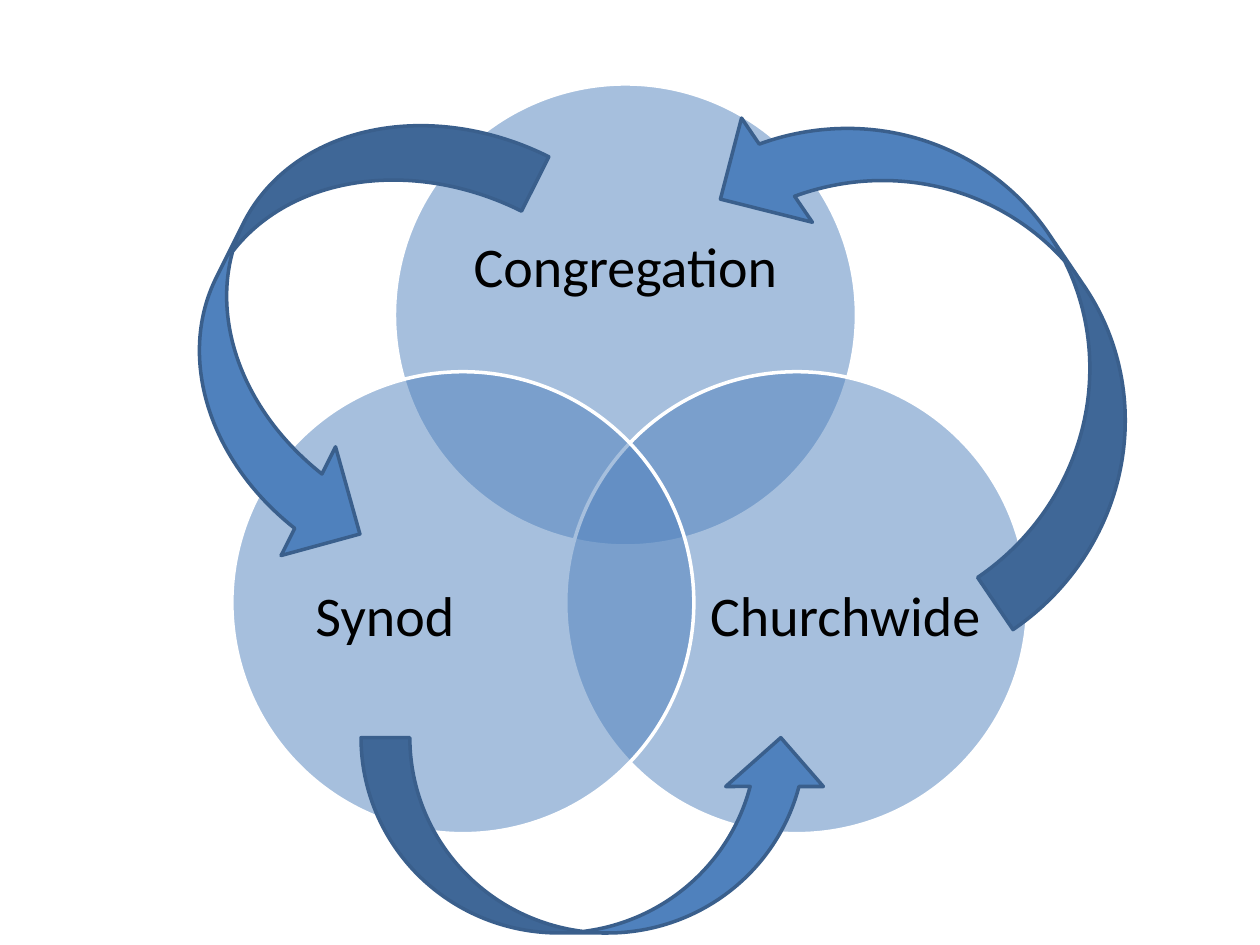
"""Build a slide of three overlapping circles joined by a cycle of curved arrows."""
import pptx
import pptx.dml.color
import pptx.enum.shapes
import pptx.enum.text
import pptx.oxml
import pptx.oxml.ns
import pptx.util

Pt = pptx.util.Pt
SHAPE = pptx.enum.shapes.MSO_SHAPE

COLORS = {"blue": "4F81BD", "outline": "3A5F8C", "white": "FFFFFF", "text": "000000"}
CIRCLE_SIZE = 264
CIRCLES = [
    ((225.4, 48), "Congregation", (260.6, 94.3, 193.7, 118.8)),
    ((323.3, 212.4), "Churchwide", (403.9, 280.8, 158.4, 145.4)),
    ((132.5, 212.4), "Synod", (157.7, 280.8, 124.6, 145.4)),
]
ARROWS = [
    (SHAPE.CURVED_RIGHT_ARROW, (120.2, 43.9, 139, 275.8), 26.6),
    (SHAPE.CURVED_RIGHT_ARROW, (284.4, 343.4, 111.6, 267.8), 270),
    (SHAPE.CURVED_UP_ARROW, (378, 109.4, 333.4, 144), 235.8),
]
FRAME_FORMAT = {
    "word_wrap": True,
    "vertical_anchor": pptx.enum.text.MSO_ANCHOR.MIDDLE,
    "margin_left": 0, "margin_top": 0, "margin_right": 0, "margin_bottom": 0,
}
PARAGRAPH_FORMAT = {"alignment": pptx.enum.text.PP_ALIGN.CENTER, "line_spacing": 0.9}
FONT_FORMAT = {"name": "Calibri", "size": Pt(32)}


def color(name):
    """Return the named colour."""
    return pptx.dml.color.RGBColor.from_string(COLORS[name])


def apply_format(target, values):
    """Set each attribute in values on the target."""
    for name, value in values.items():
        setattr(target, name, value)


def add_filled_shape(shapes, kind, box, line_name):
    """Add a blue preset shape with a two-point outline."""
    shape = shapes.add_shape(kind, *map(Pt, box))
    shape.shadow.inherit = False
    shape.fill.solid()
    shape.fill.fore_color.rgb = color("blue")
    shape.line.color.rgb = color(line_name)
    shape.line.width = Pt(2)
    return shape


def add_circle(shapes, corner):
    """Add a half-transparent circle."""
    box = (*corner, CIRCLE_SIZE, CIRCLE_SIZE)
    circle = add_filled_shape(shapes, SHAPE.OVAL, box, "white")
    fill_color = circle.element.spPr.find(
        "a:solidFill/a:srgbClr", {"a": pptx.oxml.ns.nsdecls("a").split('"')[1]})
    fill_color.append(pptx.oxml.parse_xml(
        f'<a:alpha {pptx.oxml.ns.nsdecls("a")} val="50000"/>'))


def add_label(shapes, text, box):
    """Add a centred label."""
    frame = shapes.add_textbox(*map(Pt, box)).text_frame
    apply_format(frame, FRAME_FORMAT)
    paragraph = frame.paragraphs[0]
    apply_format(paragraph, PARAGRAPH_FORMAT)
    run = paragraph.add_run()
    run.text = text
    apply_format(run.font, FONT_FORMAT)
    run.font.color.rgb = color("text")


def add_arrow(shapes, kind, box, rotation):
    """Add a rotated curved arrow."""
    add_filled_shape(shapes, kind, box, "outline").rotation = rotation


def main():
    """Build and save the slide."""
    presentation = pptx.Presentation()
    apply_format(presentation, {"slide_width": Pt(720), "slide_height": Pt(540)})
    slide = presentation.slides.add_slide(presentation.slide_layouts[6])
    diagram = slide.shapes.add_group_shape()
    for corner, text, label_box in CIRCLES:
        add_circle(diagram.shapes, corner)
        add_label(diagram.shapes, text, label_box)
    for kind, box, rotation in ARROWS:
        add_arrow(slide.shapes, kind, box, rotation)
    presentation.save("out.pptx")


if __name__ == "__main__":
    main()
